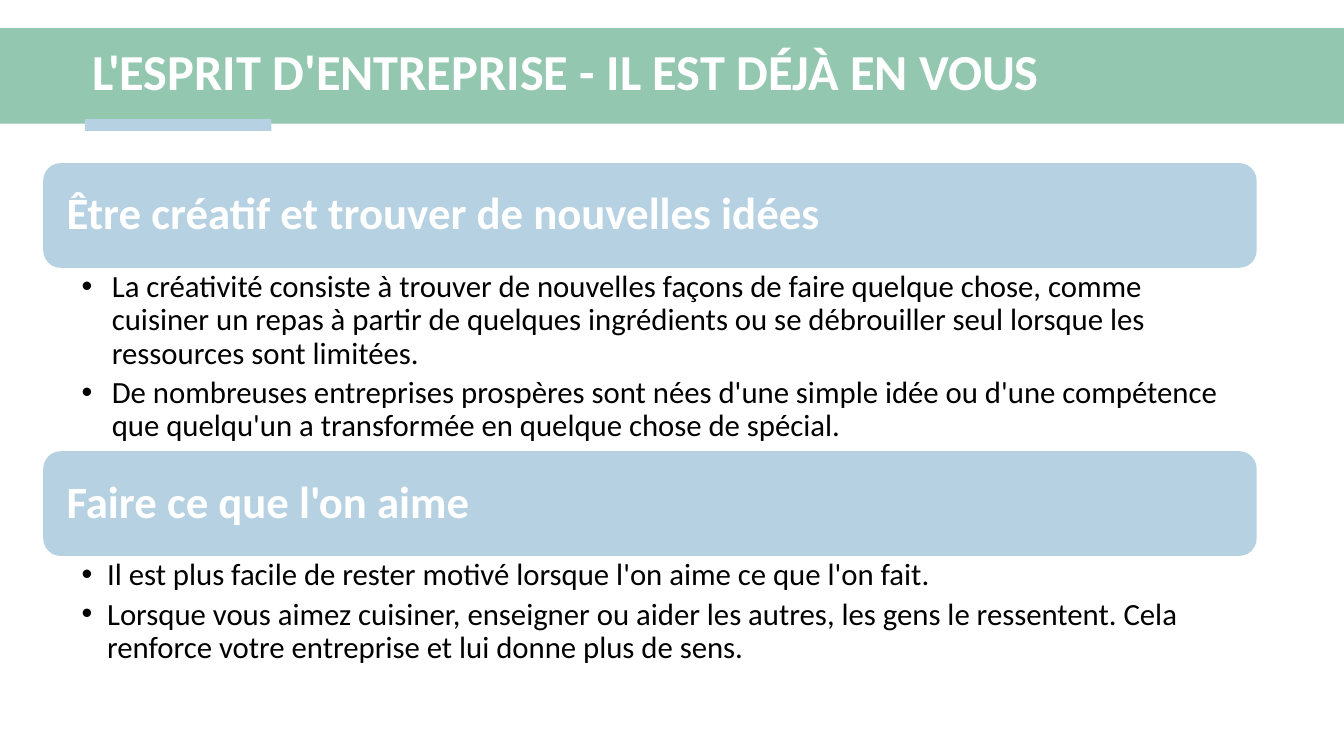
from lxml.etree import SubElement
from pptx import Presentation
from pptx.dml.color import RGBColor
from pptx.enum.shapes import MSO_SHAPE
from pptx.enum.text import MSO_ANCHOR, PP_ALIGN
from pptx.oxml.ns import qn
from pptx.util import Cm, Pt

GREEN = RGBColor(0x94, 0xC7, 0xB0)
BLUE = RGBColor(0xB6, 0xD1, 0xE1)
WHITE = RGBColor(0xFF, 0xFF, 0xFF)
BLACK = RGBColor(0x00, 0x00, 0x00)

SLIDE_WIDTH = Cm(33.87)
SECTION_LEFT = Cm(1.09)
SECTION_WIDTH = Cm(30.58)
SECTION_TOP = Cm(4.11)
HEADING_HEIGHT = Cm(2.64)

TITLE_FORMAT = {"name": "Calibri", "size": Pt(36), "bold": True}
HEADING_FORMAT = {"name": "Calibri", "size": Pt(32), "bold": True}
BULLET_FORMAT = {"name": "Calibri", "size": Pt(22), "bold": False}
HEADING_FRAME = {
    "word_wrap": True,
    "vertical_anchor": MSO_ANCHOR.MIDDLE,
    "margin_left": Cm(0.46),
    "margin_right": Cm(0.46),
}
BULLET_FRAME = {
    "word_wrap": True,
    "vertical_anchor": MSO_ANCHOR.TOP,
    "margin_left": Cm(0.97),
    "margin_right": Cm(0.43),
    "margin_top": Cm(0.08),
    "margin_bottom": Cm(0.08),
}
TITLE_FRAME = {"word_wrap": True, "vertical_anchor": MSO_ANCHOR.MIDDLE}

TITLE = "L'ESPRIT D'ENTREPRISE - IL EST DÉJÀ EN VOUS"
SECTIONS = [
    (
        "Être créatif et trouver de nouvelles idées",
        [
            "La créativité consiste à trouver de nouvelles façons de faire quelque chose, "
            "comme cuisiner un repas à partir de quelques ingrédients ou se débrouiller "
            "seul lorsque les ressources sont limitées.",
            "De nombreuses entreprises prospères sont nées d'une simple idée ou d'une "
            "compétence que quelqu'un a transformée en quelque chose de spécial.",
        ],
        Cm(4.62),
        Cm(0.76),
    ),
    (
        "Faire ce que l'on aime",
        [
            "Il est plus facile de rester motivé lorsque l'on aime ce que l'on fait.",
            "Lorsque vous aimez cuisiner, enseigner ou aider les autres, les gens le "
            "ressentent. Cela renforce votre entreprise et lui donne plus de sens.",
        ],
        Cm(2.92),
        Cm(0.64),
    ),
]


def apply_format(target, values):
    """Set every attribute of the target from a dict."""
    for name, value in values.items():
        setattr(target, name, value)


def add_block(slide, kind, position, color):
    """Add a plain filled shape without outline or shadow."""
    shape = slide.shapes.add_shape(kind, *position)
    shape.shadow.inherit = False
    shape.fill.solid()
    shape.fill.fore_color.rgb = color
    shape.line.fill.background()
    return shape


def write_paragraph(paragraph, text, text_format, color):
    """Fill one left-aligned paragraph with formatted text."""
    paragraph.text = text
    paragraph.alignment = PP_ALIGN.LEFT
    paragraph.line_spacing = 0.9
    apply_format(paragraph.font, text_format)
    paragraph.font.color.rgb = color


def add_bullet(paragraph, indent):
    """Give a paragraph a hanging round bullet."""
    paragraph.level = 1
    paragraph.space_after = Pt(4.4)
    properties = paragraph._p.get_or_add_pPr()
    properties.set("marL", str(indent))
    properties.set("indent", str(-indent))
    SubElement(properties, qn("a:buFont"), typeface="Arial")
    SubElement(properties, qn("a:buChar"), char="•")


def add_title(slide):
    """Add the title band, its accent bar and the title."""
    add_block(slide, MSO_SHAPE.RECTANGLE, (0, Cm(0.71), SLIDE_WIDTH, Cm(2.41)), GREEN)
    accent = (Cm(2.14), Cm(3), Cm(4.7), Cm(0.3))
    add_block(slide, MSO_SHAPE.RECTANGLE, accent, BLUE)
    box = slide.shapes.add_textbox(Cm(2.08), Cm(0.86), Cm(30.3), Cm(2.01))
    apply_format(box.text_frame, TITLE_FRAME)
    write_paragraph(box.text_frame.paragraphs[0], TITLE, TITLE_FORMAT, WHITE)


def add_heading(slide, top, text):
    """Add a rounded section heading."""
    position = (SECTION_LEFT, top, SECTION_WIDTH, HEADING_HEIGHT)
    shape = add_block(slide, MSO_SHAPE.ROUNDED_RECTANGLE, position, BLUE)
    apply_format(shape.text_frame, HEADING_FRAME)
    write_paragraph(shape.text_frame.paragraphs[0], text, HEADING_FORMAT, WHITE)


def add_bullets(slide, top, height, texts, indent):
    """Add the bulleted text below a heading."""
    box = slide.shapes.add_textbox(SECTION_LEFT, top, SECTION_WIDTH, height)
    frame = box.text_frame
    apply_format(frame, BULLET_FRAME)
    for index, text in enumerate(texts):
        paragraph = frame.add_paragraph() if index else frame.paragraphs[0]
        add_bullet(paragraph, indent)
        write_paragraph(paragraph, text, BULLET_FORMAT, BLACK)


def main():
    """Build and save the slide."""
    presentation = Presentation()
    presentation.slide_width = SLIDE_WIDTH
    presentation.slide_height = Cm(19.05)
    slide = presentation.slides.add_slide(presentation.slide_layouts[6])
    add_title(slide)
    top = SECTION_TOP
    for heading, texts, height, indent in SECTIONS:
        add_heading(slide, top, heading)
        add_bullets(slide, top + HEADING_HEIGHT, height, texts, indent)
        top += HEADING_HEIGHT + height
    presentation.save("out.pptx")


if __name__ == "__main__":
    main()
